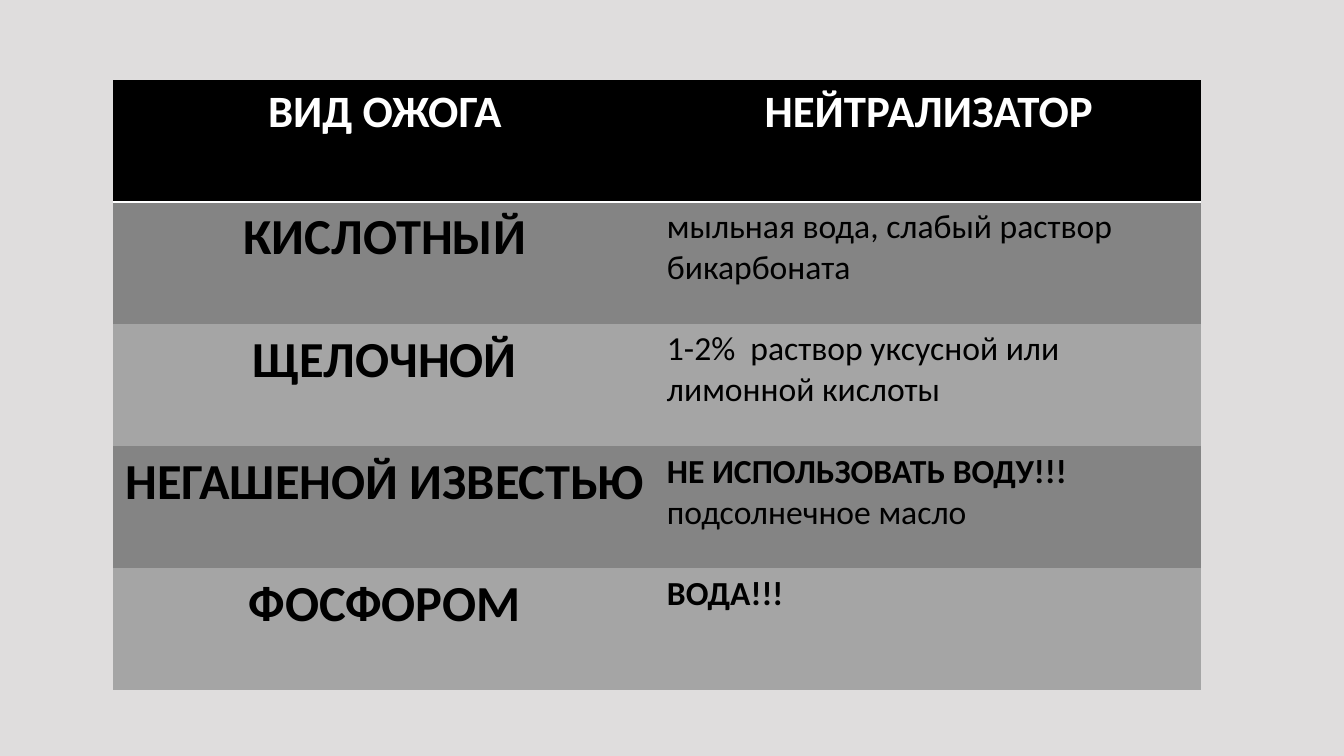
import pptx
import pptx.dml.color
import pptx.enum.text
import pptx.oxml
import pptx.oxml.ns
import pptx.util

COLORS = {
    "background": "DFDDDD",
    "header": "000000",
    "odd_row": "848484",
    "even_row": "A5A5A5",
    "light": "FFFFFF",
    "dark": "000000",
}
PLAIN_TABLE_STYLE = "{2D5ABB26-0587-4C30-8999-92F81FD0307C}"

HEADERS = ["ВИД ОЖОГА", "НЕЙТРАЛИЗАТОР"]
# Each burn with its neutralizer paragraphs as (text, bold)
BURNS = [
    ("КИСЛОТНЫЙ", [("мыльная вода, слабый раствор бикарбоната", False)]),
    ("ЩЕЛОЧНОЙ", [("1-2%  раствор уксусной или лимонной кислоты", False)]),
    ("НЕГАШЕНОЙ ИЗВЕСТЬЮ", [("НЕ ИСПОЛЬЗОВАТЬ ВОДУ!!!", True),
                            ("подсолнечное масло", False)]),
    ("ФОСФОРОМ", [("ВОДА!!!", True)]),
]


def rgb(name):
    return pptx.dml.color.RGBColor.from_string(COLORS[name])


class SlideBuilder:
    font = "Calibri"

    def __init__(self, presentation):
        self.width = presentation.slide_width
        self.height = presentation.slide_height
        self.slide = presentation.slides.add_slide(presentation.slide_layouts[6])
        background = self.slide.background.fill
        background.solid()
        background.fore_color.rgb = rgb("background")

    def table(self, left, top, width, height, rows, columns):
        """Add an unstyled table; lengths are shares of the slide's size."""
        frame = self.slide.shapes.add_table(
            rows, columns,
            int(left * self.width), int(top * self.height),
            int(width * self.width), int(height * self.height))
        properties = frame.table._tbl.tblPr
        properties.find(pptx.oxml.ns.qn("a:tableStyleId")).text = PLAIN_TABLE_STYLE
        return frame.table

    def cell(self, cell, paragraphs, size, fill, color="dark", centered=False):
        """Fill a cell with paragraphs given as (text, bold)."""
        cell.fill.solid()
        cell.fill.fore_color.rgb = rgb(fill)
        for index, (text, bold) in enumerate(paragraphs):
            frame = cell.text_frame
            paragraph = frame.add_paragraph() if index else frame.paragraphs[0]
            if centered:
                paragraph.alignment = pptx.enum.text.PP_ALIGN.CENTER
            run = paragraph.add_run()
            run.text = text
            run.font.name = self.font
            run.font.size = pptx.util.Pt(size)
            run.font.bold = bold
            run.font.color.rgb = rgb(color)

    def bottom_border(self, cell, color, points):
        border = pptx.oxml.parse_xml(
            f'<a:lnB {pptx.oxml.ns.nsdecls("a")} w="{pptx.util.Pt(points)}">'
            f'<a:solidFill><a:srgbClr val="{COLORS[color]}"/></a:solidFill></a:lnB>')
        cell._tc.get_or_add_tcPr().insert(0, border)


def main():
    presentation = pptx.Presentation()
    presentation.slide_width = pptx.util.Inches(13.33)
    presentation.slide_height = pptx.util.Inches(7.5)
    builder = SlideBuilder(presentation)

    table = builder.table(1.12 / 13.33, 0.79 / 7.5, 10.79 / 13.33, 6.06 / 7.5,
                          len(BURNS) + 1, len(HEADERS))
    for column, header in enumerate(HEADERS):
        cell = table.cell(0, column)
        builder.cell(cell, [(header, True)], 32, "header", "light", centered=True)
        builder.bottom_border(cell, "light", 2)
    for row, (burn, neutralizer) in enumerate(BURNS, start=1):
        fill = "odd_row" if row % 2 else "even_row"
        builder.cell(table.cell(row, 0), [(burn, True)], 36, fill, centered=True)
        builder.cell(table.cell(row, 1), neutralizer, 24, fill)

    presentation.save("out.pptx")


if __name__ == "__main__":
    main()
